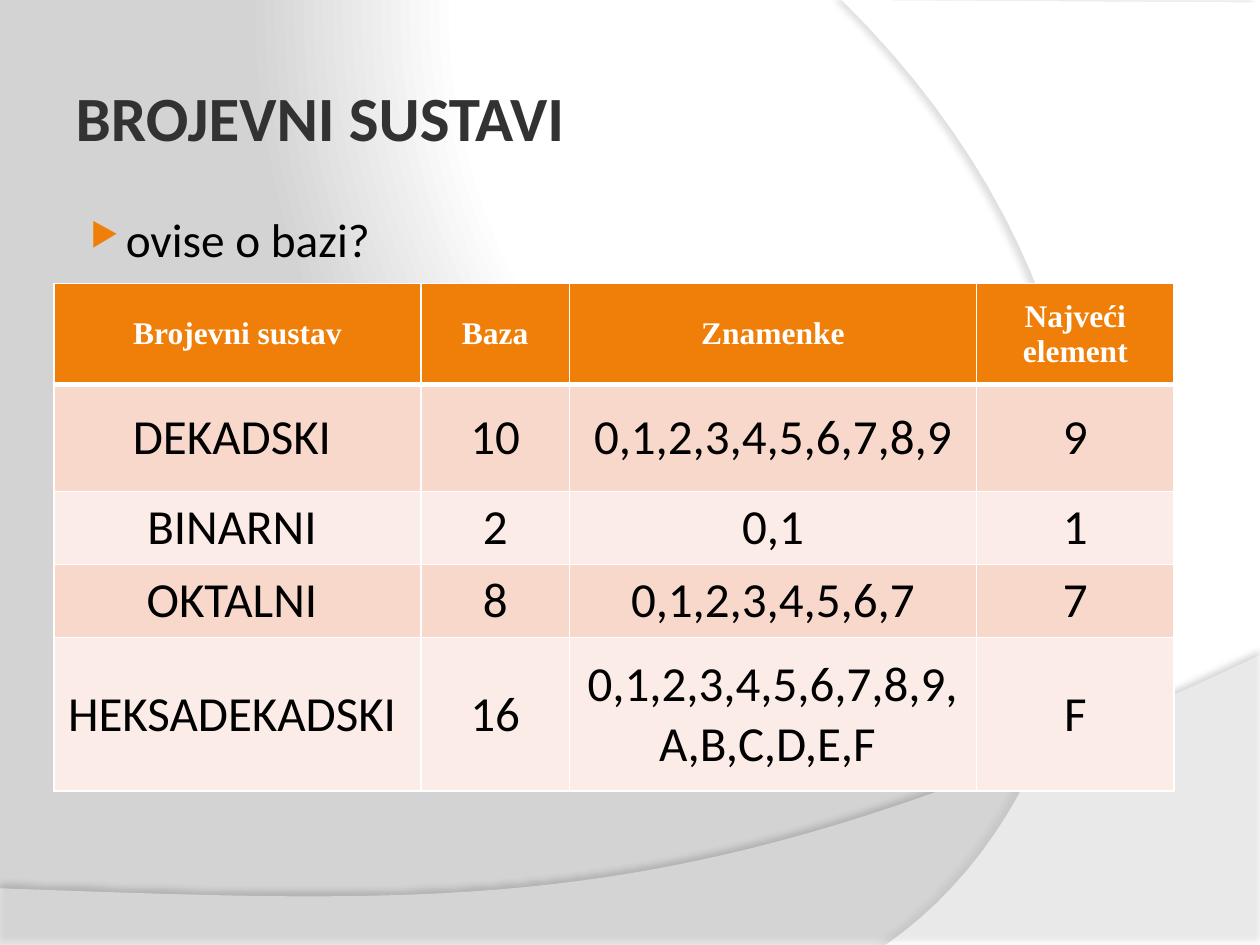
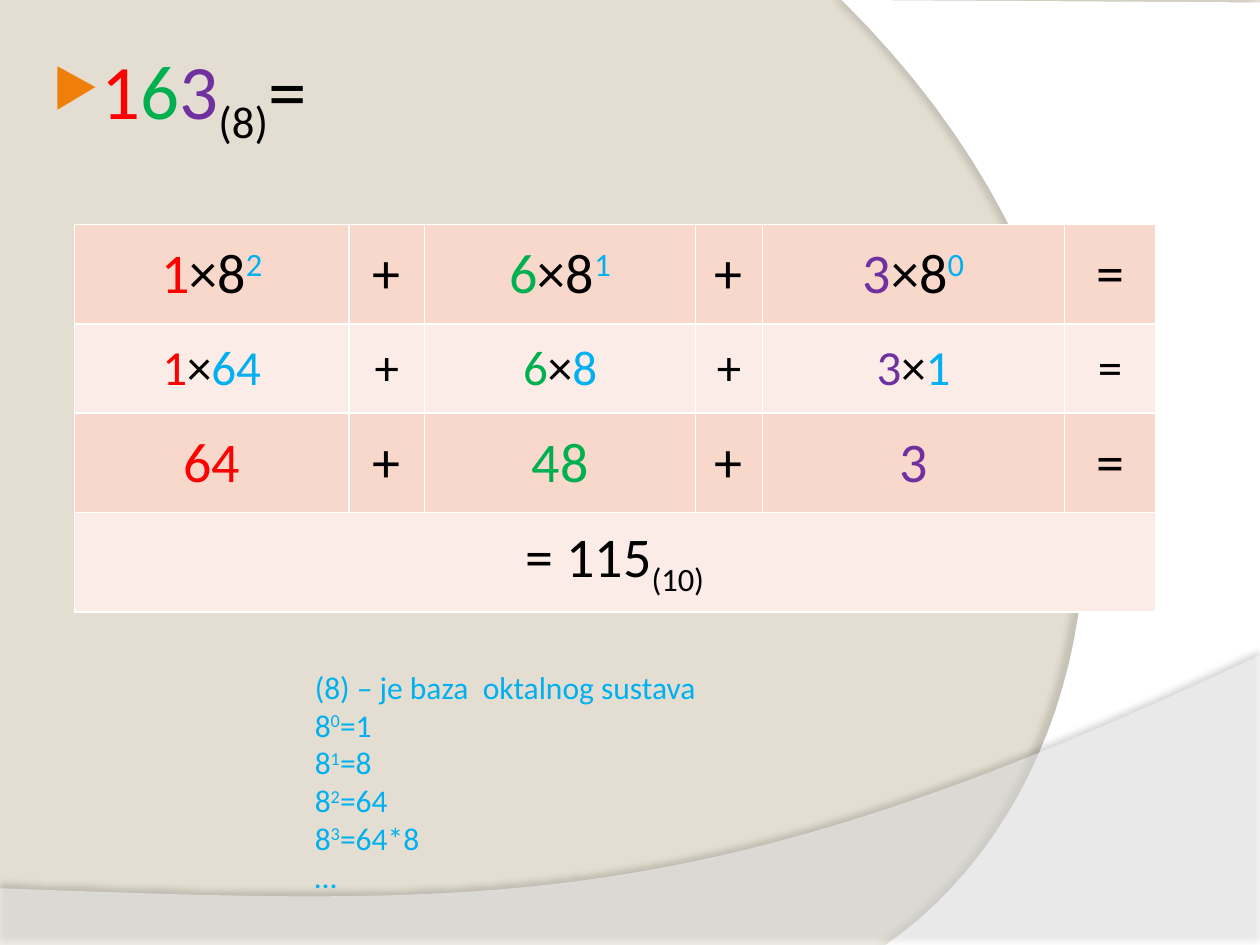
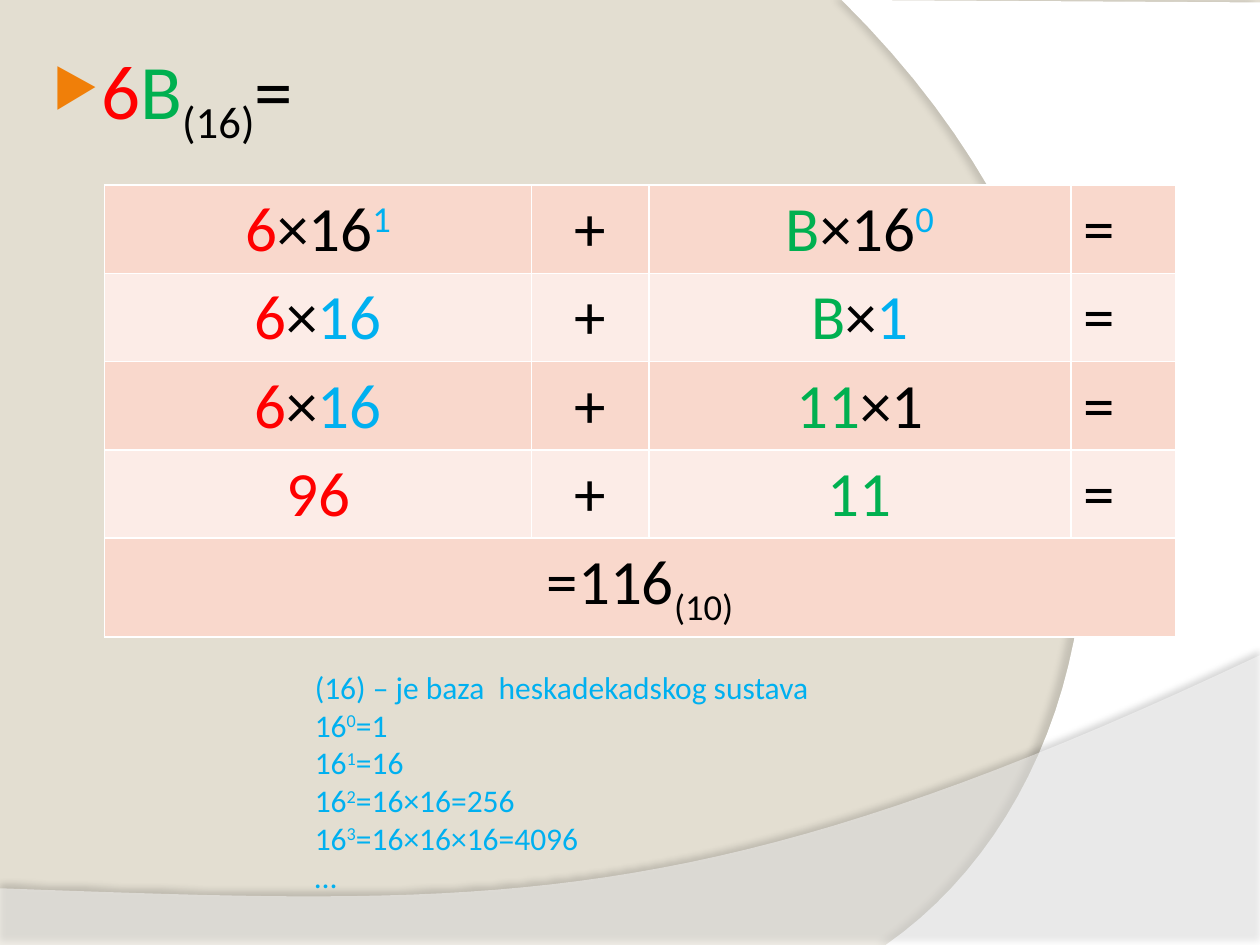
from dataclasses import dataclass
from typing import NamedTuple

from lxml.etree import SubElement
from pptx import Presentation
from pptx.dml.color import RGBColor
from pptx.enum.text import MSO_ANCHOR, MSO_AUTO_SIZE, PP_ALIGN
from pptx.oxml import parse_xml
from pptx.oxml.ns import nsdecls, qn
from pptx.util import Pt

PX = 9144
TITLE_ONLY, BLANK = 5, 6
SUPERSCRIPT, SUBSCRIPT = 30, -25


@dataclass(frozen=True)
class Theme:
    ink: str = "000000"
    white: str = "FFFFFF"
    grey: str = "D3D3D3"
    sand: str = "E3DED1"
    title: str = "323232"
    accent: str = "F07F09"
    bands: tuple = ("F9D8CC", "FCECE7")
    red: str = "FF0000"
    green: str = "00B050"
    purple: str = "7030A0"
    blue: str = "00B0F0"
    sans: str = "Calibri"
    serif: str = "Times New Roman"
    title_size: int = 36
    bullet_size: int = 27
    number_size: int = 44
    small_size: int = 18
    cell_size: int = 28
    sum_size: int = 32
    large_sum_size: int = 36


THEME = Theme()


class Span(NamedTuple):
    text: str
    color: str = THEME.ink
    lift: int = 0


def curve(start, first, second, end, steps=40):
    points = []
    for step in range(1, steps + 1):
        t = step / steps
        weights = ((1 - t) ** 3, 3 * t * (1 - t) ** 2, 3 * t * t * (1 - t), t ** 3)
        points.append(tuple(
            sum(weight * value for weight, value in zip(weights, values))
            for values in zip(start, first, second, end)
        ))
    return points


class Painter:
    def __init__(self, deck, theme):
        self.deck = deck
        self.theme = theme
        self.page = None

    def start_page(self, layout, background=None):
        self.page = self.deck.slides.add_slide(self.deck.slide_layouts[layout])
        if background:
            fill = self.page.background.fill
            fill.solid()
            fill.fore_color.rgb = RGBColor.from_string(background)
        else:
            self.glow()
        self.waves()

    def glow(self):
        stops = ((40, self.theme.white), (73, self.theme.white), (100, self.theme.grey))
        stop_xml = "".join(
            f'<a:gs pos="{position * 1000}"><a:srgbClr val="{color}"/></a:gs>'
            for position, color in stops
        )
        background = parse_xml(
            f'<p:bg {nsdecls("p", "a")}><p:bgPr><a:gradFill rotWithShape="1">'
            f'<a:gsLst>{stop_xml}</a:gsLst><a:path path="circle">'
            '<a:fillToRect l="65000" t="0" r="0" b="98000"/></a:path></a:gradFill>'
            "<a:effectLst/></p:bgPr></p:bg>"
        )
        self.page.element.find(qn("p:cSld")).insert(0, background)

    def waves(self):
        right_edge = curve((703, 750), (891, 619), (947, 275), (668, 0))
        self.wave([(1000, 2), (1000, 750), (703, 750)] + right_edge,
                  opacity=100, shade=13, distance=4, angle=180)
        lower_edge = curve((1000, 520), (559, 729), (391, 719), (0, 705))
        self.wave([(0, 705), (0, 751), (1000, 751), (1000, 520)] + lower_edge,
                  opacity=45, shade=35, distance=3.5, angle=270)

    def wave(self, points, opacity, shade, distance, angle):
        (left, top), *others = [(x * PX, y * PX) for x, y in points]
        builder = self.page.shapes.build_freeform(left, top)
        builder.add_line_segments(others, close=True)
        shape = builder.convert_to_shape()
        shape.line.fill.background()
        shape.fill.solid()
        shape.fill.fore_color.rgb = RGBColor.from_string(self.theme.white)
        properties = shape.element.spPr
        color = properties.find(qn("a:solidFill"))[0]
        SubElement(color, qn("a:alpha"), val=str(opacity * 1000))
        properties.append(parse_xml(
            f'<a:effectLst {nsdecls("a")}><a:outerShdw blurRad="{Pt(4)}" '
            f'dist="{Pt(distance)}" dir="{angle * 60000}" algn="ctr" rotWithShape="0">'
            f'<a:srgbClr val="{self.theme.ink}"><a:alpha val="{shade * 1000}"/></a:srgbClr>'
            "</a:outerShdw></a:effectLst>"
        ))

    def set_spans(self, para, spans, size, font=None, bold=False):
        para.font.size = Pt(size)
        para.font.name = font or self.theme.sans
        para.font.bold = bold
        for text, color, lift in spans:
            span = para.add_run()
            span.text = text
            span.font.color.rgb = RGBColor.from_string(color)
            if lift:
                span._r.get_or_add_rPr().set("baseline", str(lift * 1000))

    def place(self, shape, left, top, width, height):
        shape.left, shape.top = left * PX, top * PX
        shape.width, shape.height = width * PX, height * PX

    def title(self, text):
        title = self.page.shapes.title
        title.element.getparent().append(title.element)
        self.place(title, 50, 30, 900, 125)
        title.text_frame.vertical_anchor = MSO_ANCHOR.MIDDLE
        para = title.text_frame.paragraphs[0]
        para.alignment = PP_ALIGN.LEFT
        self.set_spans(para, [Span(text, self.theme.title)], self.theme.title_size, bold=True)

    def text_box(self, left, top, width, height):
        box = self.page.shapes.add_textbox(0, 0, 0, 0)
        self.place(box, left, top, width, height)
        box.text_frame.word_wrap = True
        return box.text_frame

    def bullet(self, left, top, width, height, spans, size):
        para = self.text_box(left, top, width, height).paragraphs[0]
        properties = para._p.get_or_add_pPr()
        properties.set("marL", str(40 * PX))
        properties.set("indent", str(-28 * PX))
        color = SubElement(properties, qn("a:buClr"))
        SubElement(color, qn("a:srgbClr"), val=self.theme.accent)
        SubElement(properties, qn("a:buSzPct"), val="68000")
        SubElement(properties, qn("a:buChar"), char="▶")
        para.space_before = Pt(4)
        self.set_spans(para, spans, size)

    def notes(self, lines):
        frame = self.text_box(240, 525, 500, 192)
        frame.auto_size = MSO_AUTO_SIZE.SHAPE_TO_FIT_TEXT
        for index, spans in enumerate(lines):
            para = frame.add_paragraph() if index else frame.paragraphs[0]
            self.set_spans(para, spans, self.theme.small_size)

    def border(self, cell, bottom):
        properties = cell._tc.get_or_add_tcPr()
        for side, width in (("L", 1), ("R", 1), ("T", 1), ("B", bottom)):
            line = SubElement(properties, qn(f"a:ln{side}"), w=str(Pt(width)))
            fill = SubElement(line, qn("a:solidFill"))
            SubElement(fill, qn("a:srgbClr"), val=self.theme.white)

    def table(self, left, top, widths, heights, rows, sizes, header=False, last=PP_ALIGN.CENTER):
        frame = self.page.shapes.add_table(
            len(rows), len(widths), left * PX, top * PX, sum(widths) * PX, sum(heights) * PX)
        table = frame.table
        table.first_row = header
        table.horz_banding = False
        for column, width in zip(table.columns, widths):
            column.width = width * PX
        for index, (row, height, size) in enumerate(zip(rows, heights, sizes)):
            table.rows[index].height = height * PX
            heading = header and index == 0
            band = self.theme.accent if heading else self.theme.bands[(index - header) % 2]
            for column in range(len(widths)):
                cell = table.cell(index, column)
                self.border(cell, 3 if heading else 1)
                cell.fill.solid()
                cell.fill.fore_color.rgb = RGBColor.from_string(band)
                cell.vertical_anchor = MSO_ANCHOR.MIDDLE
            if len(row) == 1:
                table.cell(index, 0).merge(table.cell(index, len(widths) - 1))
            for column, spans in enumerate(row):
                para = table.cell(index, column).text_frame.paragraphs[0]
                para.alignment = last if column == len(widths) - 1 else PP_ALIGN.CENTER
                self.set_spans(para, spans, size, self.theme.serif if heading else None, heading)


def sum_row(terms):
    cells = []
    for index, term in enumerate(terms):
        cells += [term, [Span("=" if index == len(terms) - 1 else "+")]]
    return cells


def power_row(digits, base):
    return sum_row([
        [digit, Span(f"×{base}"), Span(str(len(digits) - 1 - place), THEME.blue, SUPERSCRIPT)]
        for place, digit in enumerate(digits)
    ])


def weight_row(digits, base):
    return sum_row([
        [digit, Span("×"), Span(str(base ** (len(digits) - 1 - place)), THEME.blue)]
        for place, digit in enumerate(digits)
    ])


def value_row(digits, values):
    return sum_row([[Span(value, digit.color)] for digit, value in zip(digits, values)])


def result_row(text):
    return [[Span(text), Span("(10)", lift=SUBSCRIPT)]]


def number_spans(digits, base):
    return [*digits, Span(f"({base})", lift=SUBSCRIPT), Span("=")]


def power_notes(base, system, results):
    blue = THEME.blue
    powers = [
        [Span(str(base), blue), Span(str(exponent), blue, SUPERSCRIPT), Span(f"={result}", blue)]
        for exponent, result in enumerate(results)
    ]
    return [[Span(f"({base}) – je baza  {system} sustava", blue)], *powers, [Span("…", blue)]]


def number_systems(painter):
    theme = painter.theme
    painter.start_page(TITLE_ONLY)
    painter.title("BROJEVNI SUSTAVI")
    painter.bullet(50, 162, 900, 495, [Span("ovise o bazi?")], theme.bullet_size)
    headings = ("Brojevni sustav", "Baza", "Znamenke", "Najveći element")
    systems = (
        ("DEKADSKI ", "10", "0,1,2,3,4,5,6,7,8,9", "9"),
        ("BINARNI ", "2", "0,1", "1"),
        ("OKTALNI ", "8", "0,1,2,3,4,5,6,7", "7"),
        ("HEKSADEKADSKI ", "16", "0,1,2,3,4,5,6,7,8,9,A,B,C,D,E,F ", "F"),
    )
    rows = [[[Span(text, theme.white)] for text in headings]]
    rows += [[[Span(text)] for text in system] for system in systems]
    painter.table(43, 225, (291, 118, 323, 157), (80, 85, 58, 58, 122), rows,
                  [theme.small_size] + [theme.cell_size] * len(systems), header=True)


def conversion_page(painter, digits, base):
    painter.start_page(BLANK, painter.theme.sand)
    painter.bullet(20, 29, 961, 236, number_spans(digits, base), painter.theme.number_size)


def octal_conversion(painter):
    theme = painter.theme
    digits = [Span("1", theme.red), Span("6", theme.green), Span("3", theme.purple)]
    conversion_page(painter, digits, 8)
    rows = [
        power_row(digits, 8),
        weight_row(digits, 8),
        value_row(digits, ("64", "48", "3")),
        result_row("= 115"),
    ]
    sizes = (theme.sum_size, theme.cell_size, theme.sum_size, theme.sum_size)
    painter.table(59, 178, (218, 60, 215, 53, 240, 72), (79, 71, 79, 79), rows, sizes)
    painter.notes(power_notes(8, "oktalnog", ("1", "8", "64", "64*8")))


def hexadecimal_conversion(painter):
    theme = painter.theme
    digits = [Span("6", theme.red), Span("B", theme.green)]
    conversion_page(painter, digits, 16)
    rows = [
        power_row(digits, 16),
        weight_row(digits, 16),
        sum_row([
            [digits[0], Span("×"), Span("16", theme.blue)],
            [Span("11", theme.green), Span("×1")],
        ]),
        value_row(digits, ("96", "11")),
        result_row("=116"),
    ]
    painter.table(83, 147, (339, 93, 335, 83), [70] * len(rows), rows,
                  [theme.large_sum_size] * len(rows), last=PP_ALIGN.LEFT)
    painter.notes(power_notes(16, "heskadekadskog", ("1", "16", "16×16=256", "16×16×16=4096")))


def main():
    deck = Presentation()
    deck.slide_width, deck.slide_height = 1000 * PX, 750 * PX
    painter = Painter(deck, THEME)
    number_systems(painter)
    octal_conversion(painter)
    hexadecimal_conversion(painter)
    deck.save("out.pptx")


if __name__ == "__main__":
    main()
